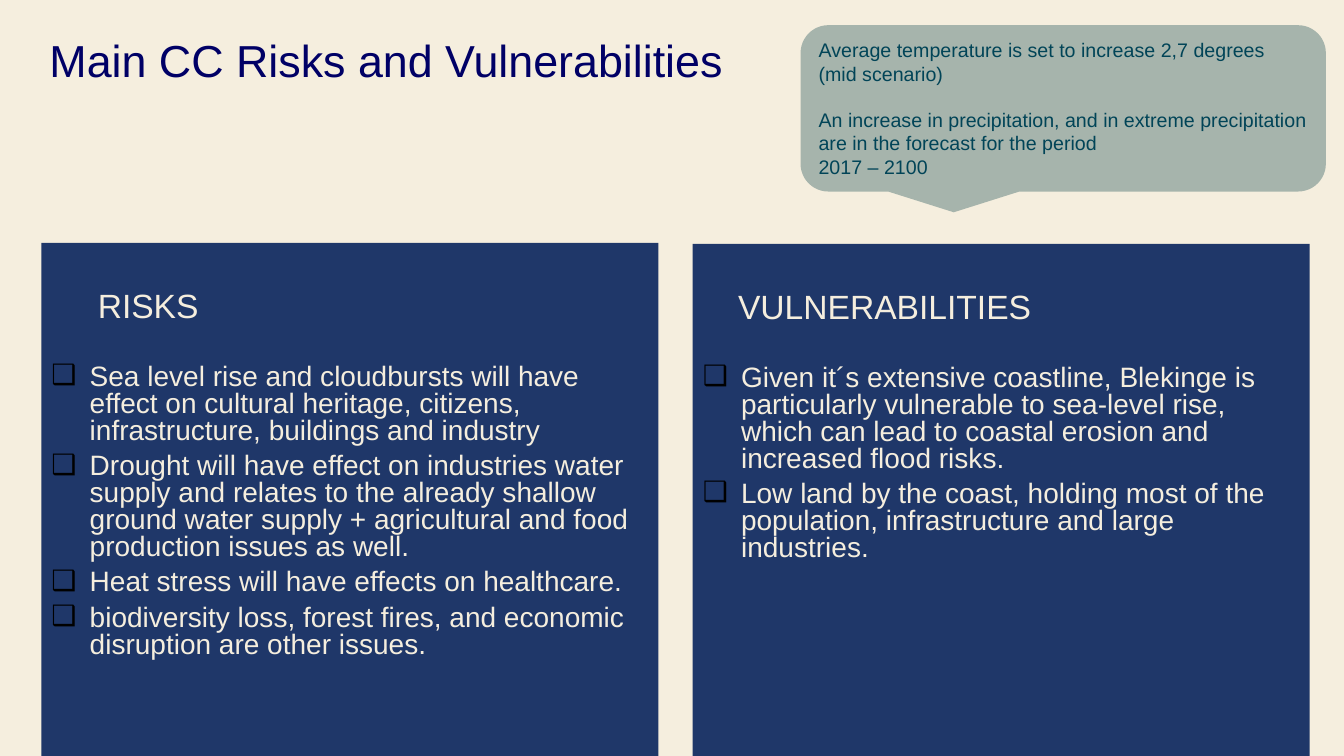
from dataclasses import dataclass

import pptx
import pptx.dml.color
import pptx.enum.shapes
import pptx.enum.text
import pptx.oxml
import pptx.oxml.ns
import pptx.util

Inches = pptx.util.Inches
Pt = pptx.util.Pt
RGBColor = pptx.dml.color.RGBColor
Align = pptx.enum.text.PP_ALIGN
Anchor = pptx.enum.text.MSO_ANCHOR

CREAM = RGBColor(0xF5, 0xEE, 0xDE)
NAVY = RGBColor(0x1F, 0x37, 0x69)
TITLE_BLUE = RGBColor(0x00, 0x00, 0x66)
SAGE = RGBColor(0xA6, 0xB4, 0xAC)
TEAL = RGBColor(0x01, 0x44, 0x57)
BLACK = RGBColor(0x00, 0x00, 0x00)

SLIDE_HEIGHT = 7.5
PANEL_WIDTH = 6.12
BULLET_INDENT = 0.38


@dataclass(frozen=True)
class Panel:
    placeholder: int
    left: float
    top: float
    heading: str
    heading_indent: float
    points: tuple[str, ...]


PANELS = (
    Panel(1, 0.41, 2.41, "RISKS", 0.46, (
        "Sea level rise and cloudbursts will have effect on cultural heritage, "
        "citizens, infrastructure, buildings and industry",
        "Drought will have effect on industries water supply and relates to the "
        "already shallow ground water supply + agricultural and food production "
        "issues as well.",
        "Heat stress will have effects on healthcare.",
        "biodiversity loss, forest fires, and economic disruption are other issues.",
    )),
    Panel(2, 6.87, 2.42, "VULNERABILITIES", 0.35, (
        "Given it´s extensive coastline, Blekinge is particularly vulnerable to "
        "sea-level rise, which can lead to coastal erosion and increased flood risks.",
        "Low land by the coast, holding most of the population, infrastructure "
        "and large industries.",
    )),
)


def place(shape, left: float, top: float, width: float, height: float) -> None:
    shape.left, shape.top = Inches(left), Inches(top)
    shape.width, shape.height = Inches(width), Inches(height)


def add_text(paragraph, text: str, size: float, color: RGBColor) -> None:
    run = paragraph.add_run()
    run.text = text
    run.font.name = "Arial"
    run.font.size = Pt(size)
    run.font.color.rgb = color


def set_bullet(paragraph, indent: float, hanging: float, symbol: str = "") -> None:
    properties = paragraph._p.get_or_add_pPr()
    properties.set("marL", str(Inches(indent)))
    properties.set("indent", str(-Inches(hanging)))
    namespace = pptx.oxml.ns.nsdecls("a")
    if symbol:
        marks = (
            f'<a:buClr {namespace}><a:srgbClr val="{BLACK}"/></a:buClr>',
            f'<a:buFont {namespace} typeface="Arial"/>',
            f'<a:buChar {namespace} char="{symbol}"/>',
        )
    else:
        marks = (f"<a:buNone {namespace}/>",)
    for mark in marks:
        properties.append(pptx.oxml.parse_xml(mark))


def prepare_frame(shape, anchor, top_inset: float):
    frame = shape.text_frame
    frame.word_wrap = True
    frame.auto_size = pptx.enum.text.MSO_AUTO_SIZE.NONE
    frame.vertical_anchor = anchor
    frame.margin_top = Inches(top_inset)
    return frame


def draw_title(slide) -> None:
    title = slide.shapes.title
    place(title, 0.39, 0.22, 12.38, 1.65)
    heading = prepare_frame(title, Anchor.TOP, 0.1).paragraphs[0]
    heading.alignment = Align.LEFT
    add_text(heading, "Main CC Risks and Vulnerabilities", 32, TITLE_BLUE)


def draw_panel(slide, panel: Panel) -> None:
    body = slide.placeholders[panel.placeholder]
    place(body, panel.left, panel.top, PANEL_WIDTH, SLIDE_HEIGHT - panel.top)
    body.fill.solid()
    body.fill.fore_color.rgb = NAVY
    frame = prepare_frame(body, Anchor.TOP, 0.49)

    heading = frame.paragraphs[0]
    heading.line_spacing = 0.8
    heading.space_before = Pt(0)
    set_bullet(heading, panel.heading_indent, 0)
    add_text(heading, panel.heading, 24, CREAM)

    for number, point in enumerate(panel.points):
        item = frame.add_paragraph()
        item.line_spacing = 0.8
        item.space_before = Pt(6 if number else 29)
        set_bullet(item, BULLET_INDENT, BULLET_INDENT, "❑")
        add_text(item, point, 20, CREAM)


def draw_forecast(slide) -> None:
    forecast = slide.shapes.add_shape(
        pptx.enum.shapes.MSO_SHAPE.ROUNDED_RECTANGULAR_CALLOUT,
        Inches(7.94), Inches(0.25), Inches(5.21), Inches(1.65))
    forecast.shadow.inherit = False
    forecast.fill.solid()
    forecast.fill.fore_color.rgb = SAGE
    forecast.line.fill.background()
    frame = prepare_frame(forecast, Anchor.MIDDLE, 0.05)

    temperature = frame.paragraphs[0]
    temperature.alignment = Align.LEFT
    add_text(temperature,
             "Average temperature is set to increase 2,7 degrees (mid scenario)",
             14, TEAL)

    precipitation = frame.add_paragraph()
    precipitation.alignment = Align.LEFT
    precipitation.space_before = Pt(16)
    add_text(precipitation,
             "An increase in precipitation, and in extreme precipitation "
             "are in the forecast for the period", 14, TEAL)
    precipitation.add_line_break()
    add_text(precipitation, "2017 – 2100", 14, TEAL)


def main() -> None:
    deck = pptx.Presentation()
    deck.slide_width = Inches(13.33)
    deck.slide_height = Inches(SLIDE_HEIGHT)
    slide = deck.slides.add_slide(deck.slide_layouts.get_by_name("Two Content"))
    slide.background.fill.solid()
    slide.background.fill.fore_color.rgb = CREAM
    draw_title(slide)
    for panel in PANELS:
        draw_panel(slide, panel)
    draw_forecast(slide)
    deck.save("out.pptx")


if __name__ == "__main__":
    main()
